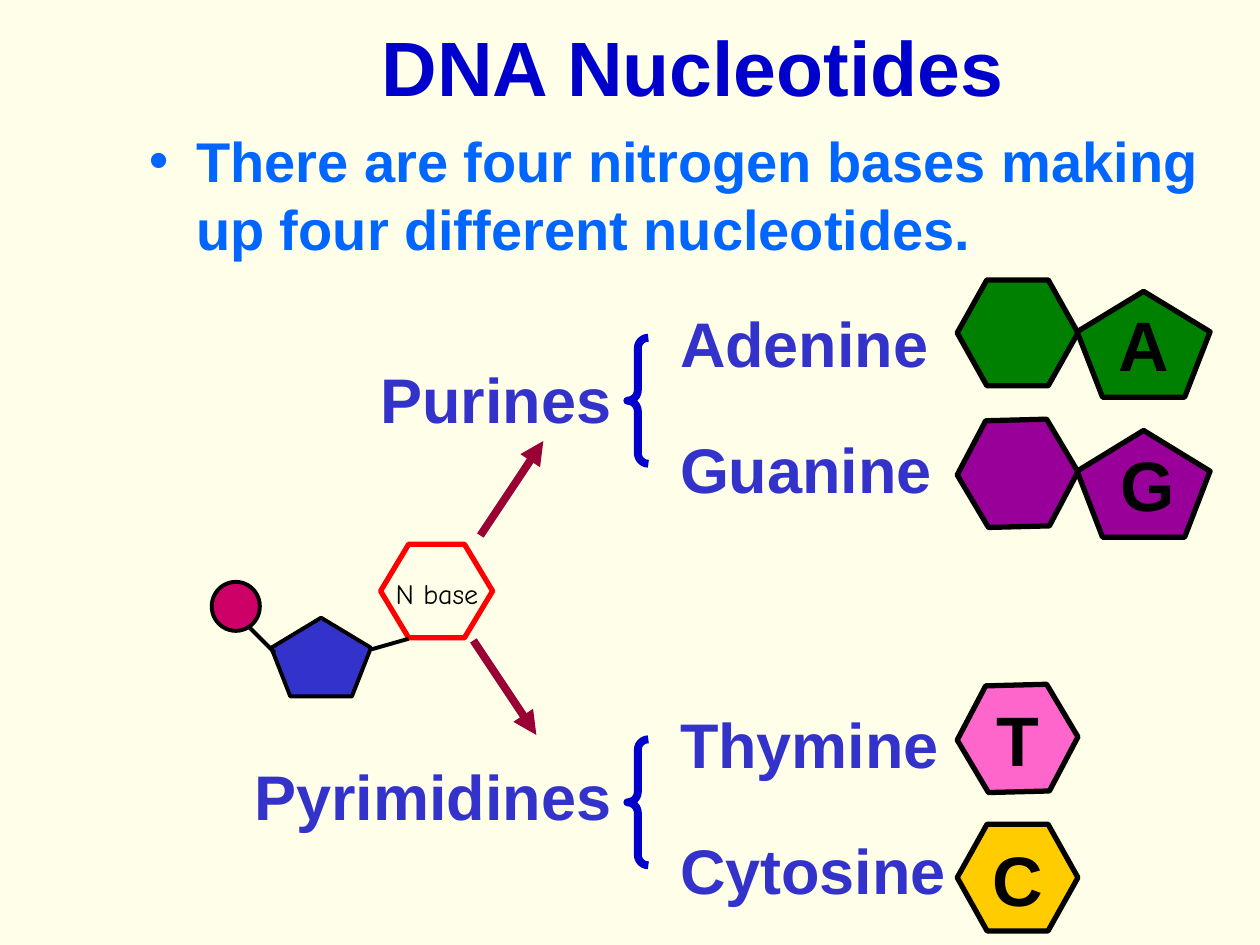
from pptx import Presentation
from pptx.dml.color import RGBColor
from pptx.enum.shapes import MSO_CONNECTOR, MSO_SHAPE
from pptx.enum.text import MSO_ANCHOR, PP_ALIGN
from pptx.oxml.ns import qn
from pptx.util import Pt
from lxml.etree import SubElement


class Theme:
    paper = "FFFFE9"
    title = "0000CC"
    body = "0066FF"
    label = "3333CC"
    ink = "000000"
    arrow = "990033"
    phosphate = "CC0066"
    sugar = "3333CC"
    nitrogen = "FF0000"
    adenine = "008000"
    guanine = "990099"
    thymine = "FF66CC"
    cytosine = "FFCC00"
    title_size = 44
    body_size = 32
    label_size = 36
    letter_size = 40
    small_size = 16
    font = "Arial"
    small_font = "Comic Neue"


def add_text(parent, text, left, top, width, height, *, size=Theme.label_size,
             color=Theme.label, font=Theme.font, bold=True, align=PP_ALIGN.LEFT,
             anchor=MSO_ANCHOR.TOP, wrap=False, bullet=None):
    box = parent.add_textbox(Pt(left), Pt(top), Pt(width), Pt(height))
    box.text_frame.word_wrap = wrap
    box.text_frame.vertical_anchor = anchor
    para = box.text_frame.paragraphs[0]
    para.alignment = align
    if bullet:
        properties = para._p.get_or_add_pPr()
        properties.set("marL", str(Pt(27)))
        properties.set("indent", str(Pt(-27)))
        SubElement(properties, qn("a:buFont")).set("typeface", font)
        SubElement(properties, qn("a:buChar")).set("char", bullet)
    span = para.add_run()
    span.text = text
    span.font.name = font
    span.font.size = Pt(size)
    span.font.bold = bold
    span.font.color.rgb = RGBColor.from_string(color)


def add_figure(parent, kind, left, top, width, height, *, fill=None,
               line=Theme.ink, weight=3, adjust=None, rotation=0):
    shape = parent.add_shape(kind, Pt(left), Pt(top), Pt(width), Pt(height))
    shape.shadow.inherit = False
    shape.rotation = rotation
    if adjust is not None:
        shape.adjustments[0] = adjust
    if fill:
        shape.fill.solid()
        shape.fill.fore_color.rgb = RGBColor.from_string(fill)
    else:
        shape.fill.background()
    shape.line.color.rgb = RGBColor.from_string(line)
    shape.line.width = Pt(weight)


deck = Presentation()
deck.slide_width = Pt(720)
deck.slide_height = Pt(540)
page = deck.slides.add_slide(deck.slide_layouts[6])
page.background.fill.solid()
page.background.fill.fore_color.rgb = RGBColor.from_string(Theme.paper)

add_text(page.shapes, "DNA Nucleotides", 72, 10.5, 648, 54, size=Theme.title_size,
         color=Theme.title, align=PP_ALIGN.CENTER, anchor=MSO_ANCHOR.MIDDLE, wrap=True)
add_text(page.shapes, "There are four nitrogen bases making up four different nucleotides.",
         78, 69, 642, 91.5, size=Theme.body_size, color=Theme.body, wrap=True, bullet="•")

for name, top in [("Adenine", 170.5), ("Guanine", 242.5),
                  ("Thymine", 399.5), ("Cytosine", 471.5)]:
    add_text(page.shapes, name, 381.5, top, 170, 50.5, wrap=True)

for family, top, brace_top in [("Purines", 202.5, 193), ("Pyrimidines", 429.5, 422.5)]:
    add_text(page.shapes, family, 132, top, 224.5, 50.5, align=PP_ALIGN.RIGHT, wrap=True)
    add_figure(page.shapes, MSO_SHAPE.LEFT_BRACE, 358.5, brace_top, 12, 72,
               line=Theme.title, weight=4.5, adjust=0.5)

bases = [
    ("A", Theme.adenine, 160, 60.5, 0, 166.5, 632, 168.5, 43),
    ("G", Theme.guanine, 240, 61, -1.5, 246, 633, 249, 45.5),
    ("T", Theme.thymine, 391.5, 61, -1.5, None, 562.5, 394.5, 39),
    ("C", Theme.cytosine, 471, 61, 0, None, 560, 474.5, 43.5),
]
for letter, color, top, height, rotation, pentagon_top, left, text_top, width in bases:
    base = page.shapes.add_group_shape().shapes
    add_figure(base, MSO_SHAPE.HEXAGON, 547, top, 69, height, fill=color,
               adjust=0.28, rotation=rotation)
    if pentagon_top:
        add_figure(base, MSO_SHAPE.REGULAR_PENTAGON, 615.5, pentagon_top, 76, height,
                   fill=color)
    add_text(base, letter, left, text_top, width, 55.5, size=Theme.letter_size,
             color=Theme.ink)

nucleotide = page.shapes.add_group_shape().shapes
add_figure(nucleotide, MSO_SHAPE.OVAL, 121, 332.5, 27.5, 28, fill=Theme.phosphate, weight=2.25)
add_figure(nucleotide, MSO_SHAPE.REGULAR_PENTAGON, 155, 353, 57, 45, fill=Theme.sugar,
           weight=2.25)
add_figure(nucleotide, MSO_SHAPE.HEXAGON, 217.5, 311, 64, 53.5, line=Theme.nitrogen, adjust=0.3)
add_text(nucleotide, "N base", 219, 326, 66, 26.5, size=Theme.small_size, color=Theme.ink,
         font=Theme.small_font, bold=False)

lines = [
    (nucleotide, (142.5, 358.5, 157, 373), Theme.ink, 2.25, False),
    (nucleotide, (212.5, 371, 233.5, 365), Theme.ink, 2.25, False),
    (page.shapes, (274.5, 306, 310.5, 252), Theme.arrow, 4.5, True),
    (page.shapes, (270.5, 366, 306.5, 420), Theme.arrow, 4.5, True),
]
for parent, ends, color, weight, arrow in lines:
    connector = parent.add_connector(MSO_CONNECTOR.STRAIGHT, *[Pt(end) for end in ends])
    connector.line.color.rgb = RGBColor.from_string(color)
    connector.line.width = Pt(weight)
    if arrow:
        SubElement(connector.line._get_or_add_ln(), qn("a:tailEnd")).set("type", "triangle")
    SubElement(connector._element.spPr, qn("a:effectLst"))

deck.save("out.pptx")
